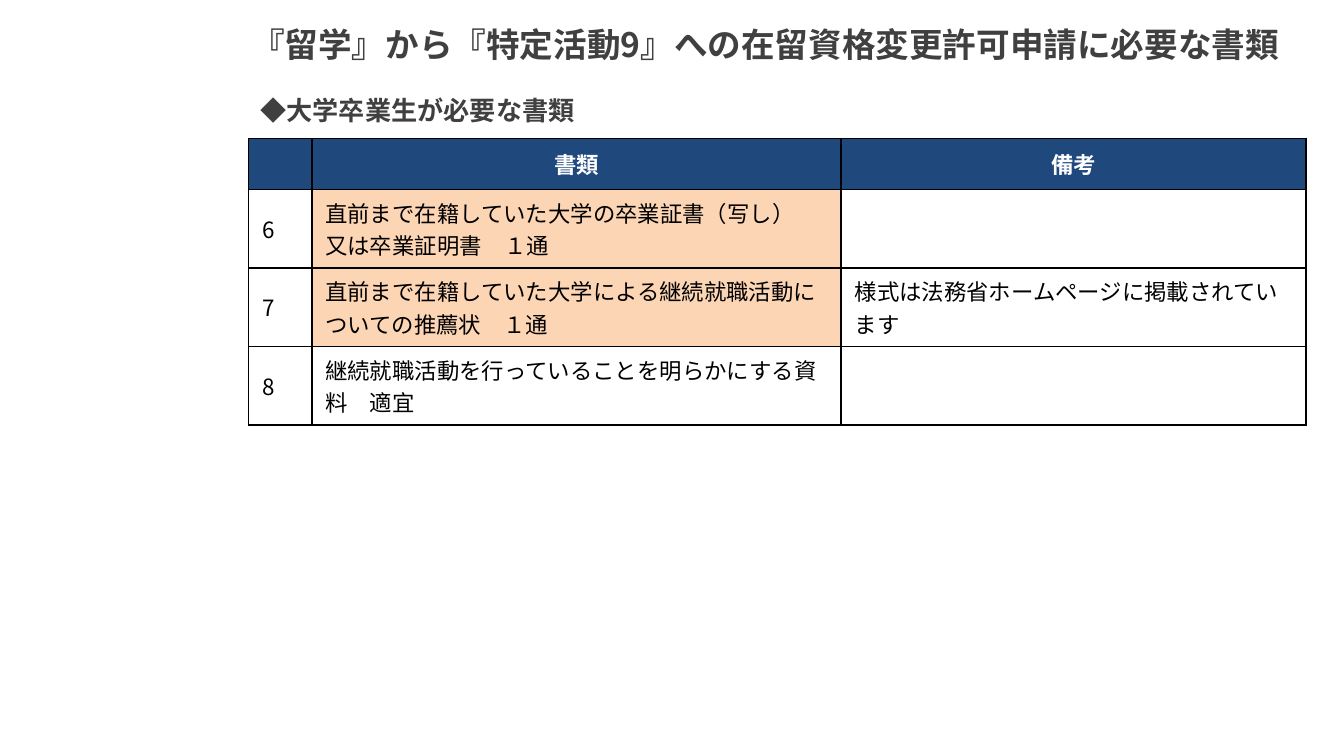
from lxml import etree
from pptx import Presentation
from pptx.dml.color import RGBColor
from pptx.enum.text import MSO_ANCHOR, PP_ALIGN
from pptx.oxml import parse_xml
from pptx.oxml.ns import nsdecls, qn
from pptx.util import Inches, Pt

FONT = "Noto Sans CJK JP"
NAVY = RGBColor(0x1F, 0x49, 0x7D)
PEACH = RGBColor(0xFC, 0xD5, 0xB5)
WHITE = RGBColor(0xFF, 0xFF, 0xFF)
BLACK = RGBColor(0, 0, 0)
GRAY = RGBColor(0x40, 0x40, 0x40)
MIDDLE, TOP = MSO_ANCHOR.MIDDLE, MSO_ANCHOR.TOP
LEFT, CENTER, JUSTIFY = PP_ALIGN.LEFT, PP_ALIGN.CENTER, PP_ALIGN.JUSTIFY

WIDTH = 10
HEIGHT = WIDTH * 9 / 16
COLUMNS = (0.47, 3.94, 3.46)
HEADER_HEIGHT, ROW_HEIGHT = 0.38, 0.55
HEADER = ("", "書類", "備考")
DOCUMENTS = (
    ("6", "直前まで在籍していた大学の卒業証書（写し）\n又は卒業証明書　１通", ""),
    ("7", "直前まで在籍していた大学による継続就職活動についての推薦状　１通",
     "様式は法務省ホームページに掲載されています"),
    ("8", "継続就職活動を行っていることを明らかにする資料　適宜", ""),
)
FROM_UNIVERSITY = ("6", "7")


def style_text(tf, size, color, bold, align=LEFT):
    """Give every paragraph of a text frame one font and alignment."""
    for p in tf.paragraphs:
        p.alignment = align
        p.font.size, p.font.bold, p.font.name = Pt(size), bold, FONT
        p.font.color.rgb = color
        props = p._p.pPr.find(qn("a:defRPr"))
        etree.SubElement(props, qn("a:ea")).set("typeface", FONT)


def add_heading(slide, box, text, size, anchor, margin, align=LEFT):
    """Place a bold heading in the box and return its paragraph."""
    sp = slide.shapes.add_textbox(*map(Inches, box))
    tf = sp.text_frame
    tf.word_wrap, tf.vertical_anchor = True, anchor
    tf.margin_top = tf.margin_bottom = Inches(margin)
    tf.text = text
    style_text(tf, size, GRAY, True, align)
    return tf.paragraphs[0]


def add_borders(cell):
    """Draw a thin black line on each side of a cell."""
    props = cell._tc.get_or_add_tcPr()
    for i, side in enumerate(("lnL", "lnR", "lnT", "lnB")):
        props.insert(i, parse_xml(
            f'<a:{side} {nsdecls("a")} w="{Pt(1)}"><a:solidFill>'
            f'<a:srgbClr val="{BLACK}"/></a:solidFill></a:{side}>'))


def fill_cell(cell, text, fill, color, bold, align):
    """Write and colour one table cell."""
    cell.text = text
    cell.vertical_anchor = MIDDLE
    cell.fill.solid()
    cell.fill.fore_color.rgb = fill
    style_text(cell.text_frame, 12, color, bold, align)
    add_borders(cell)


def add_document_table(slide, left, top):
    """Place the table of required documents at the given corner."""
    rows = (HEADER, *DOCUMENTS)
    heights = (HEADER_HEIGHT, *[ROW_HEIGHT] * len(DOCUMENTS))
    box = (left, top, sum(COLUMNS), sum(heights))
    table = slide.shapes.add_table(len(rows), len(COLUMNS), *map(Inches, box)).table
    for column, width in zip(table.columns, COLUMNS):
        column.width = Inches(width)
    for r, (row, height) in enumerate(zip(rows, heights)):
        table.rows[r].height = Inches(height)
        for c, text in enumerate(row):
            if r == 0:
                look = (NAVY, WHITE, True, CENTER)
            else:
                marked = c == 1 and row[0] in FROM_UNIVERSITY
                look = (PEACH if marked else WHITE, BLACK, False, LEFT)
            fill_cell(table.cell(r, c), text, *look)


def main():
    """Build the slide and save it."""
    prs = Presentation()
    prs.slide_width, prs.slide_height = Inches(WIDTH), Inches(HEIGHT)
    slide = prs.slides.add_slide(prs.slide_layouts[6])
    add_document_table(slide, 1.85, 1.03)
    p = add_heading(slide, (1.76, 0.6, 7.52, 0.43), "◆大学卒業生が必要な書類",
                    14, TOP, 0.1, JUSTIFY)
    p.space_after = Pt(6)
    p._p.pPr.set("marL", str(Inches(0.08)))
    add_heading(slide, (1.77, 0.05, 8.23, 0.55),
                "『留学』から『特定活動9』への在留資格変更許可申請に必要な書類",
                18, MIDDLE, 0.05)
    prs.save("out.pptx")


if __name__ == "__main__":
    main()
